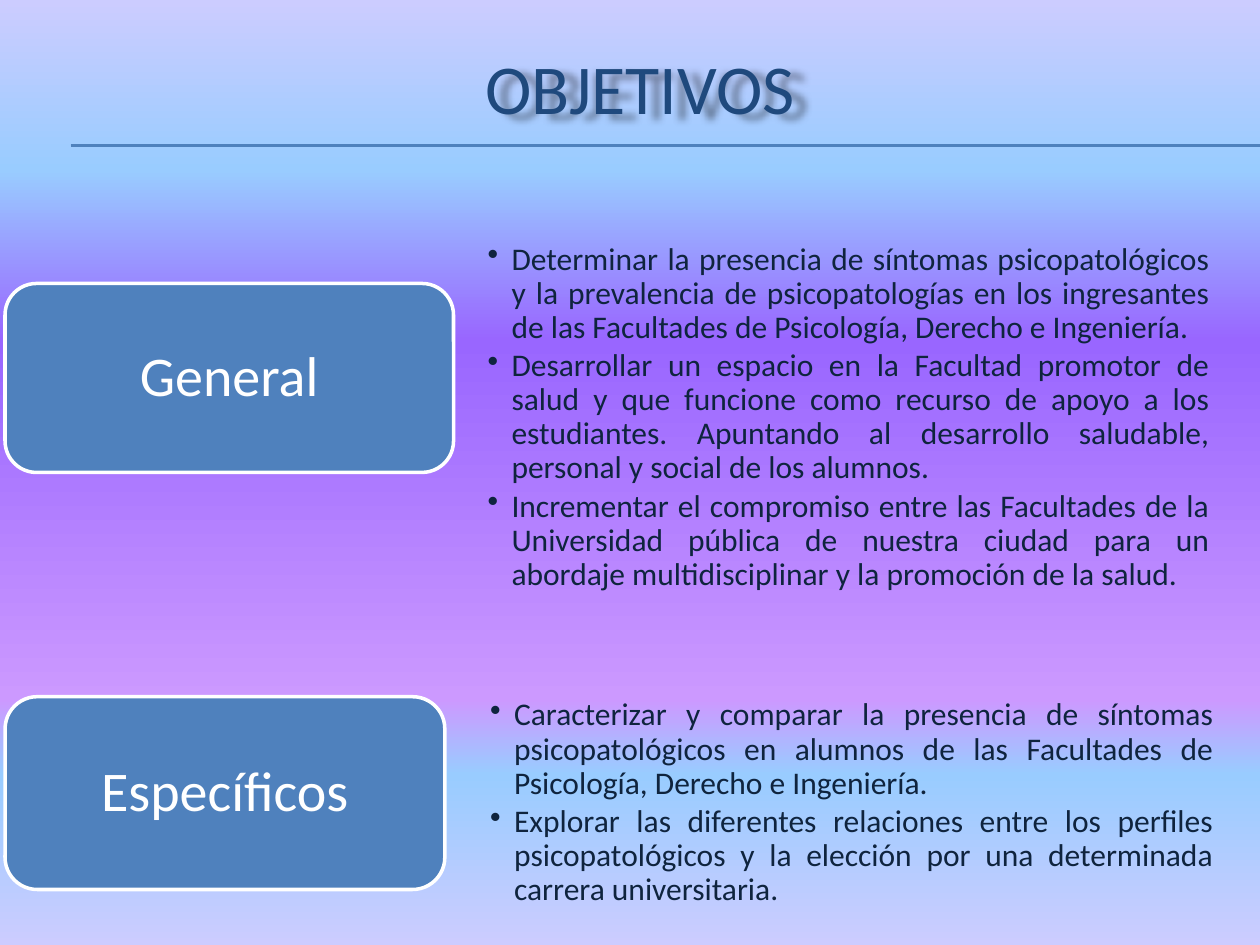
from lxml import etree
from pptx import Presentation
from pptx.dml.color import RGBColor
from pptx.enum.shapes import MSO_CONNECTOR, MSO_SHAPE
from pptx.enum.text import MSO_ANCHOR, PP_ALIGN
from pptx.oxml import parse_xml
from pptx.oxml.ns import qn
from pptx.util import Inches, Pt

STRAIGHT = MSO_CONNECTOR.STRAIGHT
ROUNDED = MSO_SHAPE.ROUNDED_RECTANGLE
MIDDLE = MSO_ANCHOR.MIDDLE
CENTER, JUSTIFY = PP_ALIGN.CENTER, PP_ALIGN.JUSTIFY
NS = 'xmlns:a="http://schemas.openxmlformats.org/drawingml/2006/main"'
FONT = "Calibri"

COLORS = {
    "title": "1F497D",
    "accent": "4F81BD",
    "body": "0F243E",
    "white": "FFFFFF",
    "shadow": "000000",
}
GRADIENT = [
    (0, "CCCCFF"), (18, "99CCFF"), (36, "9966FF"),
    (74, "CC99FF"), (82, "99CCFF"), (100, "CCCCFF"),
]
GROUPS = [
    {
        "label": "General",
        "label_box": (0.04, 2.25, 3.56, 1.5),
        "list_box": (3.6, 1.75, 6.27, 3.13),
        "top_inset": 0.14,
        "goals": [
            "Determinar la presencia de síntomas psicopatológicos y la prevalencia de "
            "psicopatologías en los ingresantes de las Facultades de Psicología, Derecho "
            "e Ingeniería.",
            "Desarrollar un espacio en la Facultad promotor de salud y que funcione como "
            "recurso de apoyo a los estudiantes. Apuntando al desarrollo saludable, "
            "personal y social de los alumnos.",
            "Incrementar el compromiso entre las Facultades de la Universidad pública de "
            "nuestra ciudad para un abordaje multidisciplinar y la promoción de la salud.",
        ],
    },
    {
        "label": "Específicos",
        "label_box": (0.04, 5.53, 3.49, 1.53),
        "list_box": (3.62, 5.21, 6.28, 2.17),
        "top_inset": 0.3,
        "goals": [
            "Caracterizar y comparar la presencia de síntomas psicopatológicos en alumnos "
            "de las Facultades de Psicología, Derecho e Ingeniería.",
            "Explorar las diferentes relaciones entre los perfiles psicopatológicos y la "
            "elección por una determinada carrera universitaria.",
        ],
    },
]


def rgb(name):
    return RGBColor.from_string(COLORS[name])


def set_attrs(obj, values):
    for name, value in values.items():
        setattr(obj, name, value)


def set_background(s):
    fill = s.background.fill
    fill.gradient()
    fill.gradient_angle = 270
    stops = s.background._cSld.find(".//" + qn("a:gsLst"))
    for stop in list(stops):
        stops.remove(stop)
    for pos, color in GRADIENT:
        stop = etree.SubElement(stops, qn("a:gs"), pos=str(pos * 1000))
        etree.SubElement(stop, qn("a:srgbClr"), val=color)


def setup_frame(sp, left=0.1, top=0.05, right=0.1, bottom=0.05):
    tf = sp.text_frame
    set_attrs(tf, {
        "word_wrap": True,
        "vertical_anchor": MIDDLE,
        "margin_left": Inches(left),
        "margin_top": Inches(top),
        "margin_right": Inches(right),
        "margin_bottom": Inches(bottom),
    })
    return tf


def write(p, text, size, color, **paragraph_format):
    set_attrs(p, paragraph_format)
    r = p.add_run()
    r.text = text
    set_attrs(r.font, {"name": FONT, "size": Pt(size)})
    r.font.color.rgb = rgb(color)


def add_rule(s, y):
    line = s.shapes.add_connector(STRAIGHT, Inches(0.56), Inches(y), Inches(10), Inches(y))
    line.line.color.rgb = rgb("accent")
    line.line.width = Pt(0.75)
    etree.SubElement(line._element.spPr, qn("a:effectLst"))


def add_title(s, text):
    sp = s.shapes.add_textbox(*map(Inches, (0.33, 0.23, 9.5, 0.92)))
    write(setup_frame(sp).paragraphs[0], text, 40, "title", alignment=CENTER)
    sp._element.spPr.append(parse_xml(
        f'<a:effectLst {NS}><a:outerShdw blurRad="50800" dist="95000" dir="1000000" '
        f'algn="tl" rotWithShape="0"><a:srgbClr val="{COLORS["shadow"]}">'
        '<a:alpha val="40000"/></a:srgbClr></a:outerShdw></a:effectLst>'))


def add_label(s, box, text):
    sp = s.shapes.add_shape(ROUNDED, *map(Inches, box))
    sp.shadow.inherit = False
    sp.fill.solid()
    sp.fill.fore_color.rgb = rgb("accent")
    sp.line.color.rgb = rgb("white")
    sp.line.width = Pt(2)
    tf = setup_frame(sp, 0.2, 0.14, 0.2, 0.14)
    write(tf.paragraphs[0], text, 32, "white", alignment=CENTER, line_spacing=0.9)


def add_bullet(p):
    pPr = p._p.get_or_add_pPr()
    indent = Inches(0.19)
    pPr.set("marL", str(indent))
    pPr.set("indent", str(-indent))
    etree.SubElement(pPr, qn("a:buChar"), char="•")


def add_list(s, box, goals, top_inset):
    sp = s.shapes.add_textbox(*map(Inches, box))
    tf = setup_frame(sp, 0.27, top_inset, 0.27, 0.14)
    for i, goal in enumerate(goals):
        p = tf.add_paragraph() if i else tf.paragraphs[0]
        write(p, goal, 18, "body", alignment=JUSTIFY, line_spacing=0.9, space_after=Pt(2.7))
        add_bullet(p)


def main():
    prs = Presentation()
    prs.slide_width, prs.slide_height = Inches(10), Inches(7.5)
    s = prs.slides.add_slide(prs.slide_layouts[6])
    set_background(s)
    for y in (1.15, 1.16):
        add_rule(s, y)
    add_title(s, "OBJETIVOS")
    for group in GROUPS:
        add_list(s, group["list_box"], group["goals"], group["top_inset"])
        add_label(s, group["label_box"], group["label"])
    prs.save("out.pptx")


if __name__ == "__main__":
    main()
